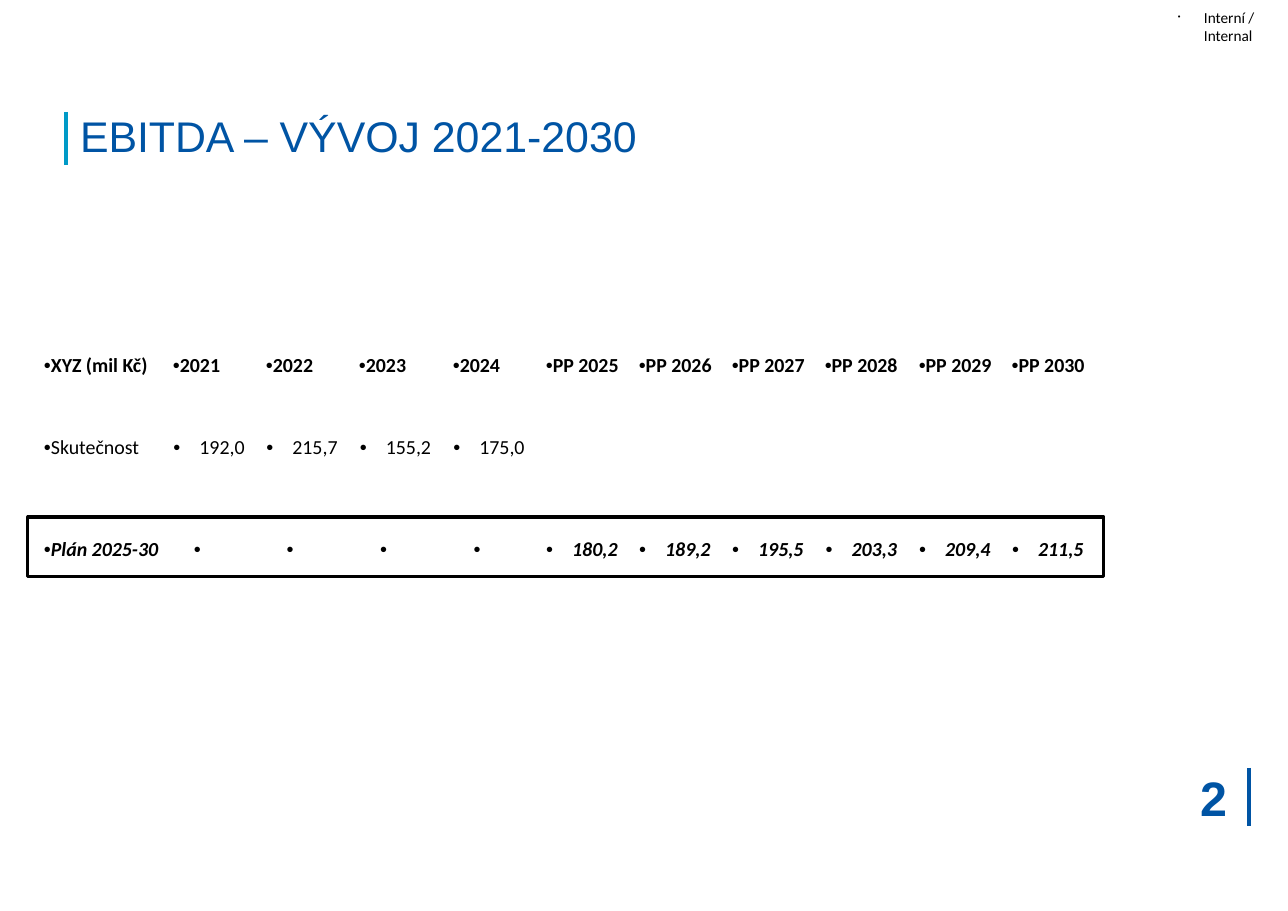
import pptx
import pptx.dml.color
import pptx.enum.shapes
import pptx.enum.text
import pptx.oxml
import pptx.oxml.ns
import pptx.util

SCALE = 8298
COLORS = {"blue": "0054A4", "teal": "009AC7", "black": "000000"}
BLANK = "\u00a0"

TITLE = "EBITDA – VÝVOJ 2021-2030"
CLASSIFICATION = "Interní / Internal"
PAGE_NUMBER = "2"
ROWS = [
    ["XYZ (mil Kč)", "2021", "2022", "2023", "2024", "PP 2025", "PP 2026",
     "PP 2027", "PP 2028", "PP 2029", "PP 2030"],
    ["Skutečnost", "192,0", "215,7", "155,2", "175,0"] + [""] * 6,
    ["Plán 2025-30"] + [BLANK] * 4
    + ["180,2", "189,2", "195,5", "203,3", "209,4", "211,5"],
]
ROW_STYLES = [(True, False), (False, False), (True, True)]
ROW_HEIGHTS = [81, 82, 123]
LABEL_WIDTH, YEARS_WIDTH, YEAR_COUNT = 129, 932, 10
TABLE_LEFT, TABLE_TOP = 43, 325
HANGING = 26
NUMBER_MARGIN = 20
RULES = [((1249, 768), (1249, 826), "blue"), ((66, 112), (66, 165), "teal")]


def px(value):
    return pptx.util.Emu(value * SCALE)


def color(name):
    return pptx.dml.color.RGBColor.from_string(COLORS[name])


def add_bullet(paragraph, hanging, percent):
    properties = paragraph._p.get_or_add_pPr()
    properties.set("marL", str(px(hanging)))
    properties.set("indent", str(px(-hanging)))
    for tag, name, value in (
        ("buSzPct", "val", str(percent * 1000)),
        ("buFont", "typeface", "Arial"),
        ("buChar", "char", "•"),
    ):
        element = pptx.oxml.parse_xml(f'<a:{tag} {pptx.oxml.ns.nsdecls("a")}/>')
        element.set(name, value)
        properties.append(element)


def format_runs(paragraph, font_name, size, color_name, bold=False, italic=False):
    for run in paragraph.runs:
        run.font.name = font_name
        run.font.size = pptx.util.Pt(size)
        run.font.bold = bold
        run.font.italic = italic
        run.font.color.rgb = color(color_name)


def add_text(slide, box, text, anchor):
    frame = slide.shapes.add_textbox(*map(px, box)).text_frame
    frame.margin_left = frame.margin_right = 0
    frame.margin_top = frame.margin_bottom = 0
    frame.word_wrap = True
    frame.vertical_anchor = anchor
    frame.text = text
    return frame.paragraphs[0]


def add_rule(slide, start, end, color_name):
    rule = slide.shapes.add_connector(
        pptx.enum.shapes.MSO_CONNECTOR.STRAIGHT, *map(px, start + end))
    rule.line.color.rgb = color(color_name)
    rule.line.width = pptx.util.Pt(2)
    rule._element.spPr.append(
        pptx.oxml.parse_xml(f'<a:effectLst {pptx.oxml.ns.nsdecls("a")}/>'))


def fill_cell(cell, text, is_number, bold, italic):
    cell.fill.background()
    cell.vertical_anchor = pptx.enum.text.MSO_ANCHOR.MIDDLE
    cell.margin_left = cell.margin_top = px(1)
    cell.margin_right = px(NUMBER_MARGIN if is_number else 1)
    cell.margin_bottom = 0
    if not text:
        return
    cell.text_frame.text = text
    paragraph = cell.text_frame.paragraphs[0]
    add_bullet(paragraph, HANGING if is_number else 0, 100)
    if is_number:
        paragraph.alignment = pptx.enum.text.PP_ALIGN.CENTER
    format_runs(paragraph, "Calibri", 13, "black", bold, italic)


def add_results_table(slide):
    table = slide.shapes.add_table(
        len(ROWS), YEAR_COUNT + 1, px(TABLE_LEFT), px(TABLE_TOP),
        px(LABEL_WIDTH + YEARS_WIDTH), px(sum(ROW_HEIGHTS))).table
    table.first_row = table.horz_banding = False
    edges = [0] + [LABEL_WIDTH + round(index * YEARS_WIDTH / YEAR_COUNT)
                   for index in range(YEAR_COUNT + 1)]
    for column, left, right in zip(table.columns, edges, edges[1:]):
        column.width = px(right - left)
    for row_index, texts in enumerate(ROWS):
        table.rows[row_index].height = px(ROW_HEIGHTS[row_index])
        for column_index, text in enumerate(texts):
            is_number = row_index > 0 and column_index > 0
            fill_cell(table.cell(row_index, column_index), text, is_number,
                      *ROW_STYLES[row_index])


def add_plan_frame(slide):
    shape = slide.shapes.add_shape(
        pptx.enum.shapes.MSO_SHAPE.RECTANGLE, *map(px, (28, 517, 1076, 60)))
    shape.shadow.inherit = False
    shape.fill.background()
    shape.line.color.rgb = color("black")
    shape.line.width = pptx.util.Pt(2)


def main():
    presentation = pptx.Presentation()
    presentation.slide_width, presentation.slide_height = px(1288), px(911)
    slide = presentation.slides.add_slide(presentation.slide_layouts[6])
    anchors = pptx.enum.text.MSO_ANCHOR

    for rule in RULES:
        add_rule(slide, *rule)

    paragraph = add_text(slide, (1178, 8, 107, 19), CLASSIFICATION, anchors.TOP)
    add_bullet(paragraph, HANGING, 50)
    format_runs(paragraph, "Calibri", 10, "black")

    paragraph = add_text(slide, (80, 65, 1024, 141), TITLE, anchors.MIDDLE)
    format_runs(paragraph, "Arial", 28, "blue")

    paragraph = add_text(slide, (1128, 768, 99, 58), PAGE_NUMBER, anchors.MIDDLE)
    paragraph.alignment = pptx.enum.text.PP_ALIGN.RIGHT
    format_runs(paragraph, "Arial", 31.6, "blue", bold=True)

    add_results_table(slide)
    add_plan_frame(slide)
    presentation.save("out.pptx")


if __name__ == "__main__":
    main()
